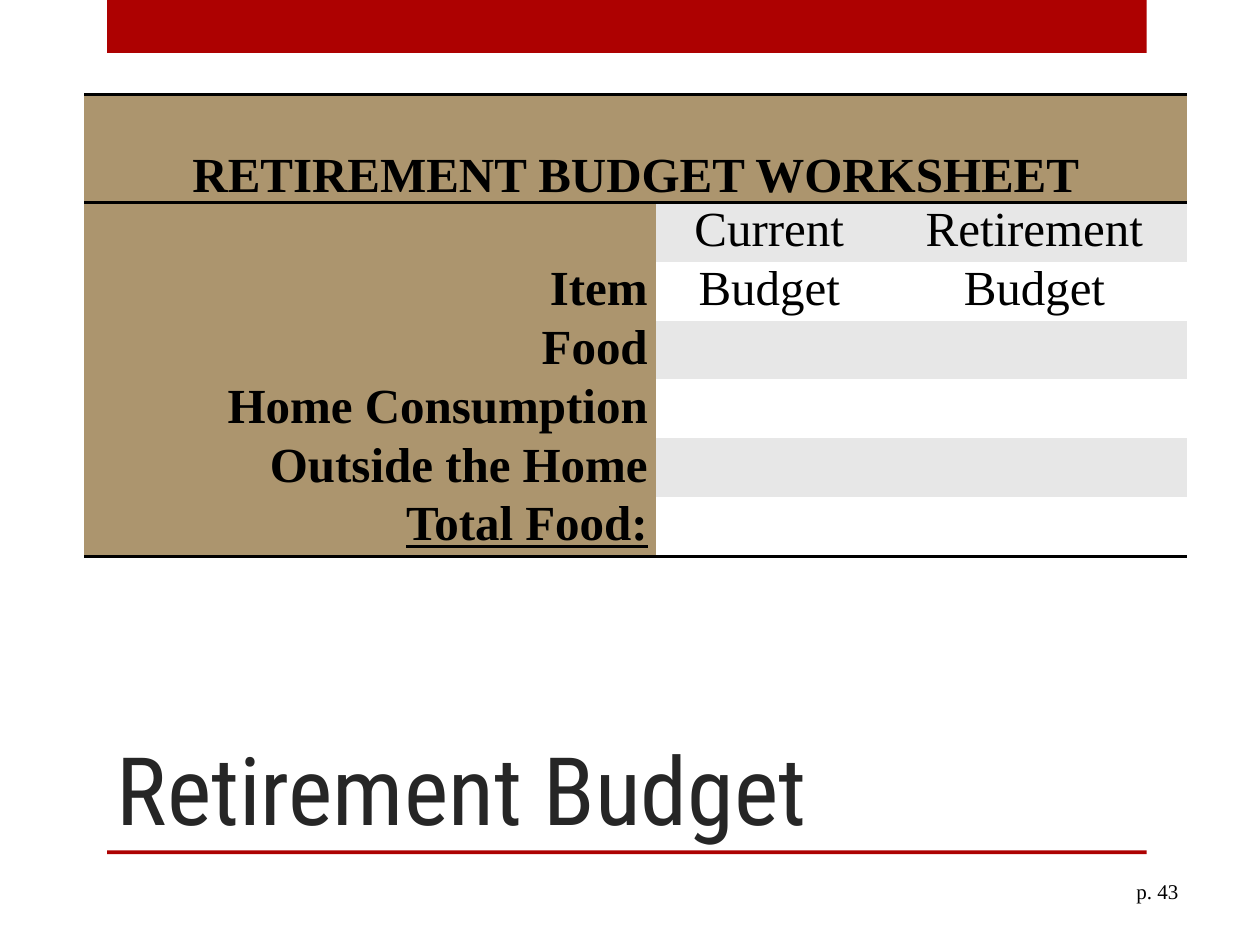
from lxml.etree import SubElement
from pptx import Presentation
from pptx.dml.color import RGBColor
from pptx.enum.shapes import MSO_SHAPE
from pptx.enum.text import MSO_ANCHOR, PP_ALIGN
from pptx.oxml.ns import qn
from pptx.util import Inches, Pt

RED = RGBColor(0xAD, 0x01, 0x01)
TAN = RGBColor(0xAC, 0x95, 0x6E)
GREY = RGBColor(0xE7, 0xE7, 0xE7)
WHITE = RGBColor(0xFF, 0xFF, 0xFF)
BLACK = RGBColor(0, 0, 0)
CHARCOAL = RGBColor(0x26, 0x26, 0x26)
SERIF = "Times New Roman"
PLAIN_TABLE_STYLE = "{2D5ABB26-0587-4C30-8999-92F81FD0307C}"
HEADING = "RETIREMENT BUDGET WORKSHEET"
BUDGET_ROWS = [
    ("", "Current", "Retirement"),
    ("Item", "Budget", "Budget"),
    ("Food", "", ""),
    ("Home Consumption", "", ""),
    ("Outside the Home", "", ""),
    ("Total Food:", "", ""),
]
COLUMN_WIDTHS = (4.54, 1.79, 2.42)
HEADING_HEIGHT = 0.86
ROW_HEIGHT = 0.44


def write(frame, text, size=28, font=SERIF, color=BLACK, bold=False,
          underline=False, align=PP_ALIGN.LEFT):
    """Put one formatted line of text in a text frame."""
    paragraph = frame.paragraphs[0]
    paragraph.alignment = align
    run = paragraph.add_run()
    run.text = text
    run.font.size = Pt(size)
    run.font.name = font
    run.font.color.rgb = color
    run.font.bold = bold
    run.font.underline = underline


def add_bar(slide, left, top, width, height):
    """Draw a solid red bar."""
    bar = slide.shapes.add_shape(MSO_SHAPE.RECTANGLE, Inches(left), Inches(top),
                                 Inches(width), Inches(height))
    bar.shadow.inherit = False
    bar.fill.solid()
    bar.fill.fore_color.rgb = RED
    bar.line.fill.background()


def add_label(slide, left, top, width, height, text, anchor=MSO_ANCHOR.TOP, **style):
    """Place a wrapped text box in the given box."""
    label = slide.shapes.add_textbox(Inches(left), Inches(top),
                                     Inches(width), Inches(height))
    label.text_frame.word_wrap = True
    label.text_frame.vertical_anchor = anchor
    write(label.text_frame, text, **style)


def add_rule(cell, side):
    """Draw a black two-point border on one side of a cell."""
    properties = cell._tc.get_or_add_tcPr()
    rule = SubElement(properties, qn(f"a:{side}"), w=str(Pt(2)))
    fill = SubElement(rule, qn("a:solidFill"))
    SubElement(fill, qn("a:srgbClr"), val=str(BLACK))
    properties.insert(0, rule)


def fill_cell(cell, color, text="", **style):
    """Colour a cell and write its text."""
    cell.fill.solid()
    cell.fill.fore_color.rgb = color
    cell.margin_left = cell.margin_right = Inches(0.07)
    cell.margin_top = cell.margin_bottom = 0
    if text:
        write(cell.text_frame, text, **style)


def add_worksheet(slide, left, top):
    """Build the budget table with its heading and item rows."""
    height = HEADING_HEIGHT + ROW_HEIGHT * len(BUDGET_ROWS)
    frame = slide.shapes.add_table(len(BUDGET_ROWS) + 1, len(COLUMN_WIDTHS),
                                   Inches(left), Inches(top),
                                   Inches(sum(COLUMN_WIDTHS)), Inches(height))
    table = frame.table
    table.first_row = table.horz_banding = False
    table._tbl.tblPr.find(qn("a:tableStyleId")).text = PLAIN_TABLE_STYLE
    for column, width in zip(table.columns, COLUMN_WIDTHS):
        column.width = Inches(width)
    for row in table.rows:
        row.height = Inches(ROW_HEIGHT)
    table.rows[0].height = Inches(HEADING_HEIGHT)

    heading = table.cell(0, 0)
    heading.merge(table.cell(0, len(COLUMN_WIDTHS) - 1))
    heading.vertical_anchor = MSO_ANCHOR.BOTTOM
    fill_cell(heading, TAN, HEADING, bold=True, align=PP_ALIGN.CENTER)

    for r, (item, *amounts) in enumerate(BUDGET_ROWS, start=1):
        fill_cell(table.cell(r, 0), TAN, item, bold=True, align=PP_ALIGN.RIGHT,
                  underline=item.startswith("Total"))
        for c, amount in enumerate(amounts, start=1):
            fill_cell(table.cell(r, c), GREY if r % 2 else WHITE, amount,
                      align=PP_ALIGN.CENTER)

    for c in range(len(COLUMN_WIDTHS)):
        add_rule(table.cell(0, c), "lnB")
        add_rule(table.cell(0, c), "lnT")
        add_rule(table.cell(len(BUDGET_ROWS), c), "lnB")


def main():
    """Build and save the slide."""
    deck = Presentation()
    deck.slide_width, deck.slide_height = Inches(10), Inches(7.5)
    slide = deck.slides.add_slide(deck.slide_layouts[6])
    add_bar(slide, 0.85, 0, 8.25, 0.42)
    add_bar(slide, 0.85, 6.75, 8.25, 0.03)
    add_label(slide, 0.83, 5, 7.42, 1.75, "Retirement Budget", MSO_ANCHOR.BOTTOM,
              size=54, font="Roboto Condensed", color=CHARCOAL)
    add_worksheet(slide, 0.67, 0.75)
    add_label(slide, 8.92, 6.92, 0.75, 0.3, "p. 43", size=12)
    deck.save("out.pptx")


if __name__ == "__main__":
    main()
